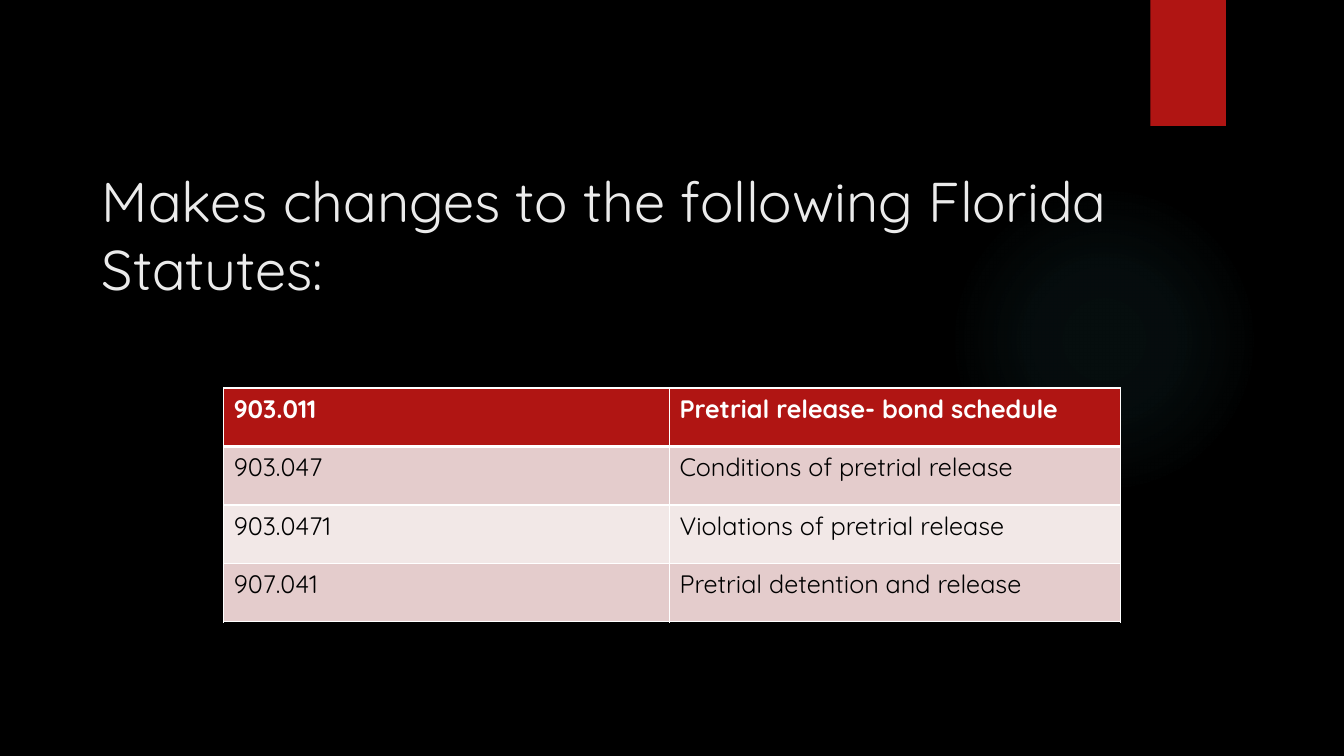
from pptx import Presentation
from pptx.dml.color import RGBColor
from pptx.enum.shapes import MSO_SHAPE as Shape
from pptx.enum.text import MSO_ANCHOR as Anchor, MSO_AUTO_SIZE as AutoSize, PP_ALIGN as Align
from pptx.oxml import parse_xml
from pptx.oxml.ns import nsdecls
from pptx.util import Inches, Pt

STATUTES = [
    ("903.011", "Pretrial release- bond schedule"),
    ("903.047", "Conditions of pretrial release"),
    ("903.0471", "Violations of pretrial release"),
    ("907.041", "Pretrial detention and release"),
]


def paint(target, color):
    target.solid()
    target.fore_color.rgb = RGBColor.from_string(color)


def write(frame, text, size=18, color="000000", bold=False, font="Quicksand"):
    para = frame.paragraphs[0]
    para.alignment = Align.LEFT
    span = para.add_run()
    span.text = text
    span.font.name = font
    span.font.size = Pt(size)
    span.font.bold = bold
    span.font.color.rgb = RGBColor.from_string(color)


class StatuteSlide:
    background, accent, heading, line = "000000", "B01513", "EBEBEB", "FFFFFF"
    bands = ("F2E8E7", "E4CCCC")
    glow_color, glow_stops = "50B9C1", ((0, 7), (36, 6), (69, 0))

    def __init__(self, deck):
        self.page = deck.slides.add_slide(deck.slide_layouts[5])
        paint(self.page.background.fill, self.background)

    def shape(self, kind, left, top, width, height):
        shape = self.page.shapes.add_shape(
            kind, Inches(left), Inches(top), Inches(width), Inches(height))
        shape.shadow.inherit = False
        shape.line.fill.background()
        return shape

    def glow(self, left, top, size):
        circle = self.shape(Shape.OVAL, left, top, size, size)
        circle.fill.background()
        stops = "".join(
            f'<a:gs pos="{place * 1000}"><a:srgbClr val="{self.glow_color}">'
            f'<a:alpha val="{alpha * 1000}"/></a:srgbClr></a:gs>'
            for place, alpha in self.glow_stops)
        gradient = parse_xml(
            f'<a:gradFill {nsdecls("a")}><a:gsLst>{stops}</a:gsLst><a:path path="circle">'
            '<a:fillToRect l="50000" t="50000" r="50000" b="50000"/></a:path></a:gradFill>')
        properties = circle.element.spPr
        properties.replace(properties.find("{*}noFill"), gradient)

    def ribbon(self, left, top, width, height):
        ribbon = self.shape(Shape.RECTANGLE, left, top, width, height)
        paint(ribbon.fill, self.accent)
        ribbon.element.spPr.find("{*}effectLst").append(parse_xml(
            f'<a:outerShdw {nsdecls("a")} blurRad="{Pt(3)}" dist="{Pt(2)}" dir="5400000">'
            '<a:srgbClr val="000000"><a:alpha val="45000"/></a:srgbClr></a:outerShdw>'))

    def title(self, text, left, top, width, height):
        box = self.page.shapes.title
        box.left, box.top = Inches(left), Inches(top)
        box.width, box.height = Inches(width), Inches(height)
        frame = box.text_frame
        frame.word_wrap = True
        frame.auto_size = AutoSize.NONE
        frame.vertical_anchor = Anchor.BOTTOM
        write(frame, text, size=40, color=self.heading)
        box.element.getparent().append(box.element)

    def border(self, cell, side, width):
        cell._tc.get_or_add_tcPr().append(parse_xml(
            f'<a:ln{side} {nsdecls("a")} w="{Pt(width)}"><a:solidFill>'
            f'<a:srgbClr val="{self.line}"/></a:solidFill></a:ln{side}>'))

    def table(self, rows, left, top, widths, row_height):
        table = self.page.shapes.add_table(
            len(rows), len(widths), Inches(left), Inches(top),
            Inches(sum(widths)), Inches(row_height * len(rows))).table
        for column, width in zip(table.columns, widths):
            column.width = Inches(width)
        for index, row in enumerate(rows):
            header = index == 0
            for column, text in enumerate(row):
                cell = table.cell(index, column)
                for side in "LRTB":
                    thick = (header and side == "B") or (index == 1 and side == "T")
                    self.border(cell, side, 3 if thick else 1)
                paint(cell.fill, self.accent if header else self.bands[index % 2])
                write(cell.text_frame, text, bold=header,
                      color=self.line if header else "000000")


def main():
    deck = Presentation()
    deck.slide_width, deck.slide_height = Inches(13.33), Inches(7.5)
    slide = StatuteSlide(deck)
    slide.glow(9.41, 1.83, 3.08)
    slide.ribbon(11.41, 0, 0.75, 1.25)
    slide.title("Makes changes to the following Florida Statutes:", 0.91, 0.43, 11.37, 2.61)
    slide.table(STATUTES, 2.22, 3.85, (4.42, 4.47), 0.58)
    deck.save("out.pptx")


if __name__ == "__main__":
    main()
